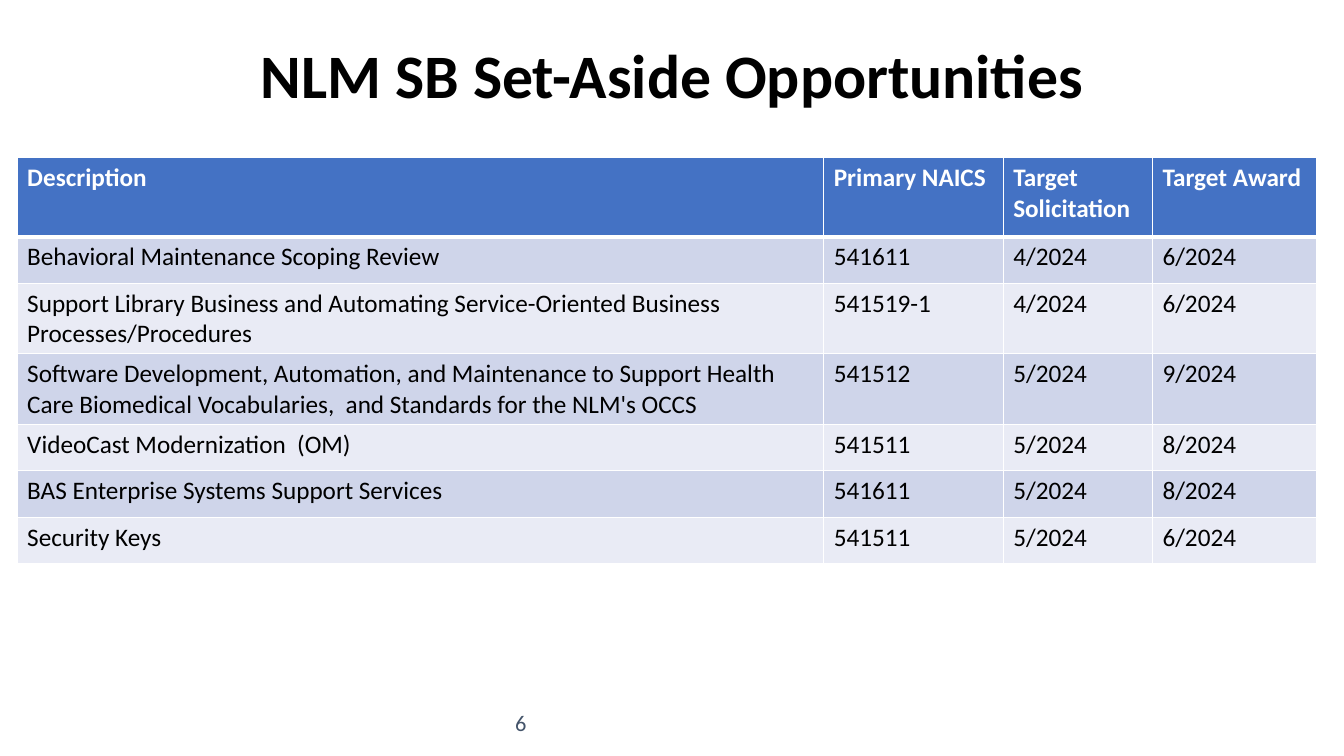
from lxml import etree
from pptx import Presentation
from pptx.dml.color import RGBColor
from pptx.enum.text import MSO_ANCHOR, PP_ALIGN
from pptx.oxml.ns import qn
from pptx.util import Inches, Pt

TOP, MIDDLE = MSO_ANCHOR.TOP, MSO_ANCHOR.MIDDLE
CENTER = PP_ALIGN.CENTER
FONT = "Calibri"
WHITE, BLACK, SLATE = "FFFFFF", "000000", "44546A"
HEADER_FILL = "4472C4"
BAND_FILLS = ["E9EBF5", "CFD5EA"]

TITLE = "NLM SB Set-Aside Opportunities"
PAGE_NUMBER = "6"
ROWS = [
    ("Description", "Primary NAICS", "Target Solicitation", "Target Award"),
    ("Behavioral Maintenance Scoping Review", "541611", "4/2024", "6/2024"),
    ("Support Library Business and Automating Service-Oriented Business Processes/Procedures",
     "541519-1", "4/2024", "6/2024"),
    ("Software Development, Automation, and Maintenance to Support Health Care Biomedical "
     "Vocabularies,  and Standards for the NLM's OCCS", "541512", "5/2024", "9/2024"),
    ("VideoCast Modernization  (OM)", "541511", "5/2024", "8/2024"),
    ("BAS Enterprise Systems Support Services", "541611", "5/2024", "8/2024"),
    ("Security Keys", "541511", "5/2024", "6/2024"),
]
COLUMN_WIDTHS = [8, 1.78, 1.48, 1.63]
HEADER_HEIGHT, ROW_HEIGHT = 0.79, 0.46
TABLE_LEFT, TABLE_TOP = 0.17, 1.56
THIN, THICK = 1, 3


def color(value):
    return RGBColor.from_string(value)


def add_run(paragraph, text, size, text_color, bold=False):
    run = paragraph.add_run()
    run.text = text
    run.font.name = FONT
    run.font.size = Pt(size)
    run.font.bold = bold
    run.font.color.rgb = color(text_color)


def add_text(slide, box, text, size, text_color, anchor, bold=False):
    shape = slide.shapes.add_textbox(*map(Inches, box))
    frame = shape.text_frame
    frame.word_wrap = True
    frame.vertical_anchor = anchor
    paragraph = frame.paragraphs[0]
    paragraph.alignment = CENTER
    add_run(paragraph, text, size, text_color, bold)
    return shape


def add_border(cell, side, width):
    properties = cell._tc.get_or_add_tcPr()
    line = etree.SubElement(properties, qn(f"a:ln{side}"), w=str(Pt(width)))
    fill = etree.SubElement(line, qn("a:solidFill"))
    etree.SubElement(fill, qn("a:srgbClr"), val=WHITE)


def fill_cell(cell, text, row_index):
    header = row_index == 0
    add_border(cell, "L", THIN)
    add_border(cell, "R", THIN)
    add_border(cell, "T", THICK if row_index == 1 else THIN)
    add_border(cell, "B", THICK if header else THIN)
    cell.fill.solid()
    cell.fill.fore_color.rgb = color(HEADER_FILL if header else BAND_FILLS[row_index % 2])
    add_run(cell.text_frame.paragraphs[0], text, 18, WHITE if header else BLACK, header)


def add_opportunities(slide):
    heights = [HEADER_HEIGHT] + [ROW_HEIGHT] * (len(ROWS) - 1)
    box = (TABLE_LEFT, TABLE_TOP, sum(COLUMN_WIDTHS), sum(heights))
    table = slide.shapes.add_table(len(ROWS), len(COLUMN_WIDTHS), *map(Inches, box)).table
    for column, width in zip(table.columns, COLUMN_WIDTHS):
        column.width = Inches(width)
    for row_index, (row, height, texts) in enumerate(zip(table.rows, heights, ROWS)):
        row.height = Inches(height)
        for cell, text in zip(row.cells, texts):
            fill_cell(cell, text, row_index)


def main():
    presentation = Presentation()
    presentation.slide_width = Inches(13.33)
    presentation.slide_height = Inches(7.5)
    slide = presentation.slides.add_slide(presentation.slide_layouts[6])

    number = add_text(slide, (4.83, 6.92, 0.67, 0.5), PAGE_NUMBER, 16, SLATE, MIDDLE)
    frame = number.text_frame
    frame.margin_left = frame.margin_right = frame.margin_top = frame.margin_bottom = 0

    title = add_text(slide, (0.92, 0.4, 11.5, 1.45), TITLE, 44.1, BLACK, TOP, True)
    title.text_frame.paragraphs[0].line_spacing = 0.9

    add_opportunities(slide)
    presentation.save("out.pptx")


if __name__ == "__main__":
    main()
